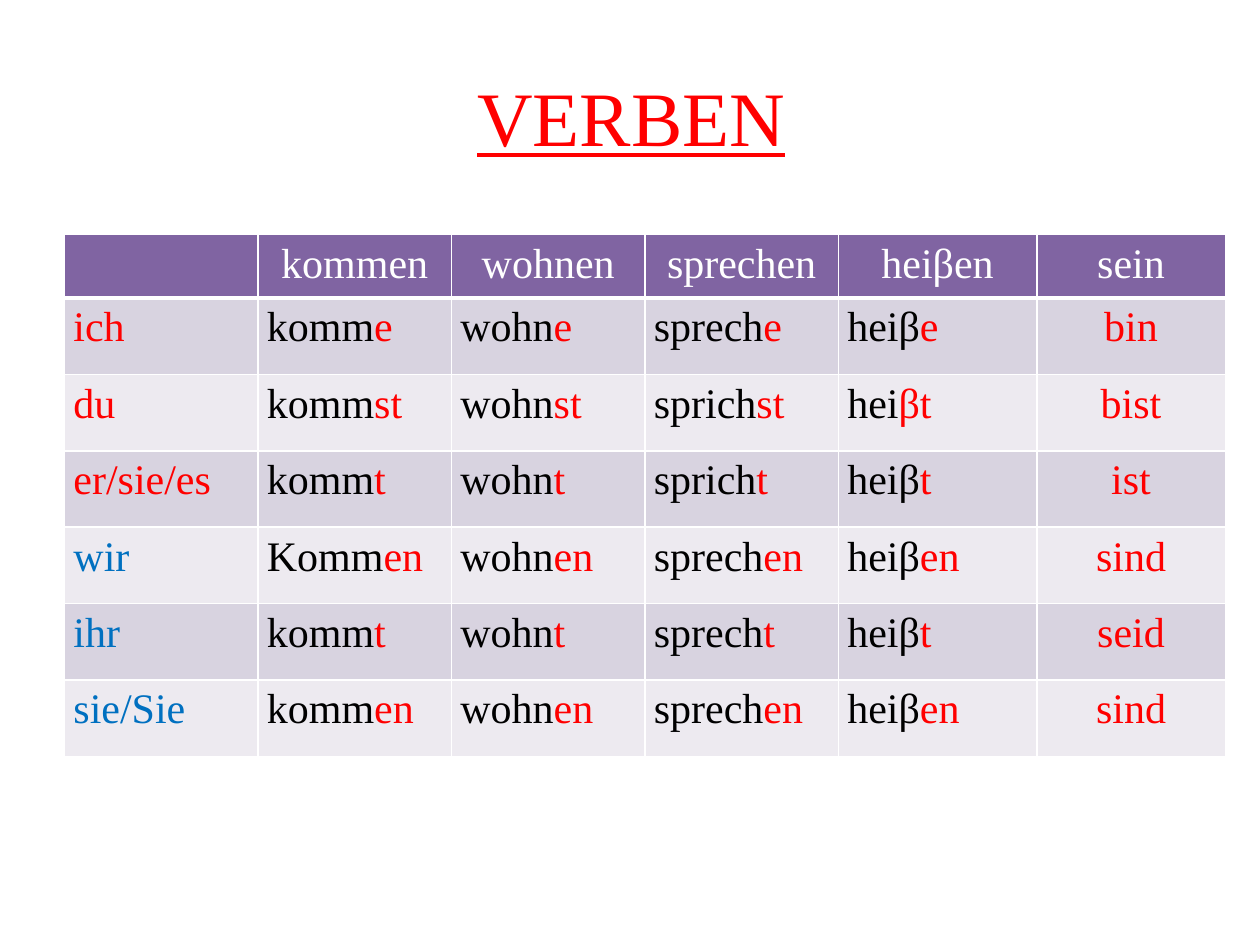
import lxml.etree
import pptx
import pptx.dml.color
import pptx.enum.text
import pptx.oxml.ns
import pptx.util

Cm, Pt = pptx.util.Cm, pptx.util.Pt
ALIGN = pptx.enum.text.PP_ALIGN

# Content: "|" separates the stem from the highlighted ending
TITLE = "VERBEN"
VERBS = ["", "kommen", "wohnen", "sprechen", "heiβen", "sein"]
SINGULAR = [
    ["ich", "komm|e", "wohn|e", "sprech|e", "heiβ|e", "|bin"],
    ["du", "komm|st", "wohn|st", "sprich|st", "hei|βt", "|bist"],
    ["er/sie/es", "komm|t", "wohn|t", "sprich|t", "heiβ|t", "|ist"],
]
PLURAL = [
    ["wir", "Komm|en", "wohn|en", "sprech|en", "heiβ|en", "|sind"],
    ["ihr", "komm|t", "wohn|t", "sprech|t", "heiβ|t", "|seid"],
    ["sie/Sie", "komm|en", "wohn|en", "sprech|en", "heiβ|en", "|sind"],
]

THEME = {
    "font": "Times New Roman", "title_size": 44, "table_size": 24,
    "ending": "FF0000", "stem": "000000", "singular": "FF0000", "plural": "0070C0",
    "header_text": "FFFFFF", "header_fill": "8064A2", "bands": ["D8D3E0", "EDEAF0"],
    "border": "FFFFFF",
}
COLUMN_WIDTHS = [3.9, 3.9, 3.9, 3.9, 4.0, 3.8]
HEADER_HEIGHT, ROW_HEIGHT = 1.18, 1.54


def rgb(value):
    return pptx.dml.color.RGBColor.from_string(value)


def write(frame, text, size=THEME["table_size"], color=THEME["stem"],
          align=ALIGN.LEFT, underline=False):
    """Write one paragraph; what follows "|" takes the ending colour."""
    para = frame.paragraphs[0]
    para.alignment = align
    for part, part_color in zip(text.split("|"), (color, THEME["ending"])):
        if part:
            span = para.add_run()
            span.text = part
            span.font.name = THEME["font"]
            span.font.size = Pt(size)
            span.font.bold = False
            span.font.underline = underline
            span.font.color.rgb = rgb(part_color)


def style_cell(cell, fill, bottom_width):
    cell.margin_left = cell.margin_right = Cm(0.18)
    cell.margin_top = cell.margin_bottom = Cm(0.13)
    cell.fill.solid()
    cell.fill.fore_color.rgb = rgb(fill)
    # Borders come before the fill in the cell properties
    qn = pptx.oxml.ns.qn
    properties = cell._tc.get_or_add_tcPr()
    sides = [("a:lnL", 1), ("a:lnR", 1), ("a:lnT", 1), ("a:lnB", bottom_width)]
    for position, (side, width) in enumerate(sides):
        line = lxml.etree.Element(qn(side), w=str(Pt(width)))
        solid = lxml.etree.SubElement(line, qn("a:solidFill"))
        lxml.etree.SubElement(solid, qn("a:srgbClr"), val=THEME["border"])
        properties.insert(position, line)


def add_title(page):
    box = page.shapes.add_textbox(Cm(1.3), Cm(0.74), Cm(22.86), Cm(3.18))
    box.text_frame.word_wrap = True
    box.text_frame.vertical_anchor = pptx.enum.text.MSO_ANCHOR.MIDDLE
    write(box.text_frame, TITLE, size=THEME["title_size"], color=THEME["ending"],
          align=ALIGN.CENTER, underline=True)


def add_verb_table(page):
    rows = [VERBS] + SINGULAR + PLURAL
    heights = [HEADER_HEIGHT] + [ROW_HEIGHT] * (len(rows) - 1)
    table = page.shapes.add_table(
        len(rows), len(VERBS), Cm(1.3), Cm(4.73),
        Cm(sum(COLUMN_WIDTHS)), Cm(sum(heights))).table
    for column, width in zip(table.columns, COLUMN_WIDTHS):
        column.width = Cm(width)
    for row, height in zip(table.rows, heights):
        row.height = Cm(height)

    for r, words in enumerate(rows):
        header = r == 0
        fill = THEME["header_fill"] if header else THEME["bands"][(r - 1) % 2]
        pronoun = THEME["singular" if r <= len(SINGULAR) else "plural"]
        for c, word in enumerate(words):
            cell = table.cell(r, c)
            style_cell(cell, fill, bottom_width=3 if header else 1)
            if header:
                color = THEME["header_text"]
            else:
                color = pronoun if c == 0 else THEME["stem"]
            centered = header or c == len(words) - 1
            write(cell.text_frame, word, color=color,
                  align=ALIGN.CENTER if centered else ALIGN.LEFT)


def main():
    deck = pptx.Presentation()
    deck.slide_width, deck.slide_height = Cm(25.4), Cm(19.05)
    page = deck.slides.add_slide(deck.slide_layouts[6])
    add_title(page)
    add_verb_table(page)
    deck.save("out.pptx")


if __name__ == "__main__":
    main()
